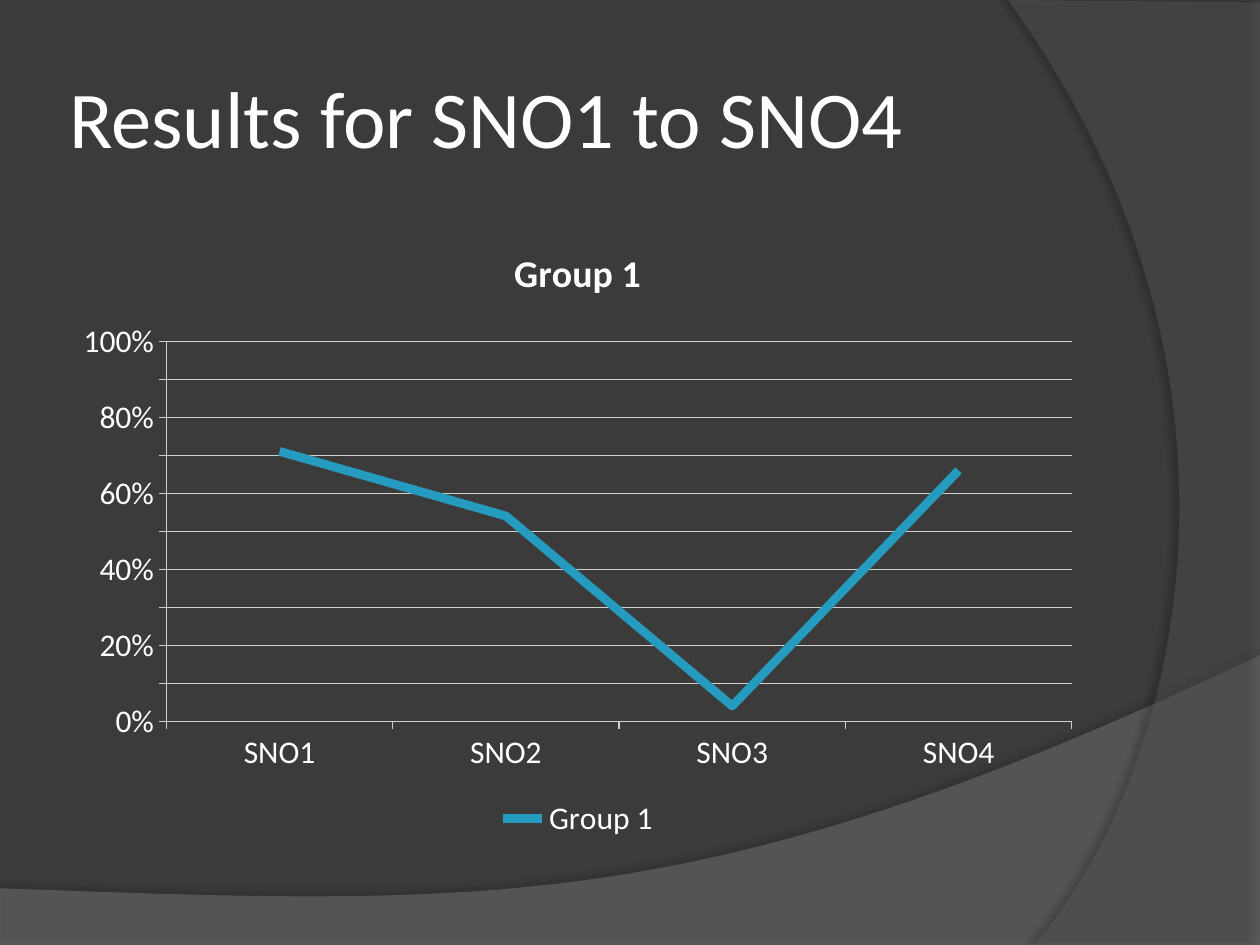
"""Build a slide with a line chart of the SNO1 to SNO4 results on a dark curved backdrop."""
from lxml.etree import SubElement
from pptx import Presentation
from pptx.chart.data import CategoryChartData
from pptx.dml.color import RGBColor
from pptx.enum.chart import XL_CHART_TYPE, XL_LEGEND_POSITION, XL_MARKER_STYLE, XL_TICK_MARK
from pptx.enum.text import MSO_ANCHOR, PP_ALIGN
from pptx.oxml.ns import qn
from pptx.util import Inches, Pt

FONT = "Calibri"
COLORS = {
    "background": "3B3B3B",
    "lower_wave": "7F7F7F",
    "right_wave": "5E5E5E",
    "shadow": "000000",
    "text": "FFFFFF",
    "grid": "D0D0D0",
    "series": "259BBF",
}
RESULTS = {"SNO1": 0.71, "SNO2": 0.54, "SNO3": 0.04, "SNO4": 0.66}


def rgb(name):
    return RGBColor.from_string(COLORS[name])


def style_font(font, size, bold=False):
    font.name = FONT
    font.size = Pt(size)
    font.bold = bold
    font.color.rgb = rgb("text")


def curve_points(start, control_1, control_2, end, steps=60):
    points = []
    for step in range(steps + 1):
        t = step / steps
        weights = ((1 - t) ** 3, 3 * t * (1 - t) ** 2, 3 * t**2 * (1 - t), t**3)
        corners = (start, control_1, control_2, end)
        points.append(tuple(sum(w * c[axis] for w, c in zip(weights, corners)) for axis in (0, 1)))
    return points


def set_alpha(color_element, percent):
    SubElement(color_element, qn("a:alpha"), val=str(percent * 1000))


def add_shadow(shape, alpha, blur, distance, direction):
    shape.shadow.inherit = False
    effects = shape._element.spPr.find(qn("a:effectLst"))
    shadow = SubElement(
        effects, qn("a:outerShdw"), blurRad=str(Pt(blur)), dist=str(Pt(distance)),
        dir=str(direction * 60000), algn="ctr", rotWithShape="0",
    )
    set_alpha(SubElement(shadow, qn("a:srgbClr"), val=COLORS["shadow"]), alpha)


def add_wave(slide, color, alpha, corners, curve, shadow):
    points = [(Inches(x), Inches(y)) for x, y in corners + curve_points(*curve)]
    builder = slide.shapes.build_freeform(*points[0])
    builder.add_line_segments(points[1:], close=True)
    shape = builder.convert_to_shape()
    shape.fill.solid()
    shape.fill.fore_color.rgb = rgb(color)
    set_alpha(shape._element.spPr.find(qn("a:solidFill"))[0], alpha)
    shape.line.fill.background()
    add_shadow(shape, *shadow)


def set_title(slide, text):
    title = slide.shapes.title
    slide.shapes._spTree.append(title._element)
    title.left, title.top = Inches(0.5), Inches(0.3)
    title.width, title.height = Inches(8.17), Inches(1.25)
    frame = title.text_frame
    frame.text = text
    frame.word_wrap = True
    frame.vertical_anchor = MSO_ANCHOR.MIDDLE
    frame.margin_left = frame.margin_right = Inches(0.05)
    frame.margin_top = frame.margin_bottom = Inches(0.05)
    paragraph = frame.paragraphs[0]
    paragraph.alignment = PP_ALIGN.LEFT
    style_font(paragraph.runs[0].font, 46)


def style_line(line, color, width):
    line.color.rgb = rgb(color)
    line.width = Pt(width)


def style_axes(chart):
    for axis in (chart.category_axis, chart.value_axis):
        axis.major_tick_mark = XL_TICK_MARK.OUTSIDE
        axis.minor_tick_mark = XL_TICK_MARK.NONE
        style_line(axis.format.line, "grid", 0.75)
        style_font(axis.tick_labels.font, 18)
    values = chart.value_axis
    values.minimum_scale, values.maximum_scale, values.major_unit = 0, 1, 0.1
    values.has_major_gridlines = True
    style_line(values.major_gridlines.format.line, "grid", 0.75)
    values.tick_labels.number_format = "0%"
    values.tick_labels.number_format_is_linked = False


def add_results_chart(slide, name, results):
    data = CategoryChartData(number_format="0%")
    data.categories = list(results)
    data.add_series(name, list(results.values()))
    chart = slide.shapes.add_chart(
        XL_CHART_TYPE.LINE, Inches(0.5), Inches(1.75), Inches(8.17), Inches(4.95), data
    ).chart
    style_font(chart.font, 18)
    chart.has_title = True
    chart.chart_title.text_frame.text = name
    style_font(chart.chart_title.text_frame.paragraphs[0].runs[0].font, 21.6, bold=True)
    chart.has_legend = True
    chart.legend.position = XL_LEGEND_POSITION.BOTTOM
    chart.legend.include_in_layout = False
    style_font(chart.legend.font, 18)
    style_axes(chart)
    plot = chart.plots[0]
    plot.vary_by_categories = False
    series = plot.series[0]
    series.smooth = False
    series.marker.style = XL_MARKER_STYLE.NONE
    style_line(series.format.line, "series", 5)


def main():
    presentation = Presentation()
    presentation.slide_width, presentation.slide_height = Inches(10), Inches(7.5)
    slide = presentation.slides.add_slide(presentation.slide_layouts[5])
    slide.background.fill.solid()
    slide.background.fill.fore_color.rgb = rgb("background")
    add_wave(
        slide, "lower_wave", 45, [(0, 7.05), (0, 7.51), (10, 7.51)],
        [(10, 5.2), (5.59, 7.29), (3.91, 7.19), (0, 7.05)], (35, 4, 3.5, 270),
    )
    add_wave(
        slide, "right_wave", 40, [(10, 0.02), (10, 7.5)],
        [(8.21, 7.5), (9.35, 6.19), (10.18, 3), (8, 0)], (45, 4, 4, 180),
    )
    set_title(slide, "Results for SNO1 to SNO4")
    add_results_chart(slide, "Group 1", RESULTS)
    presentation.save("out.pptx")


if __name__ == "__main__":
    main()
